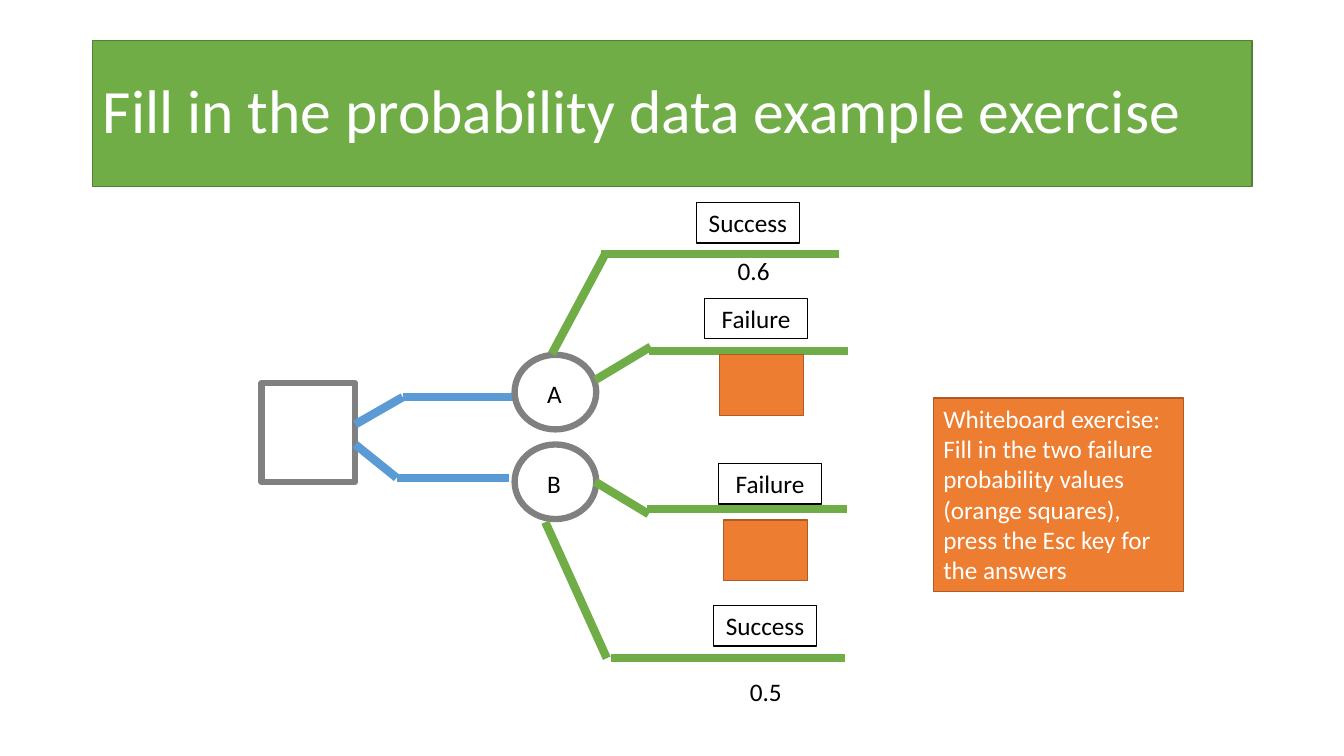
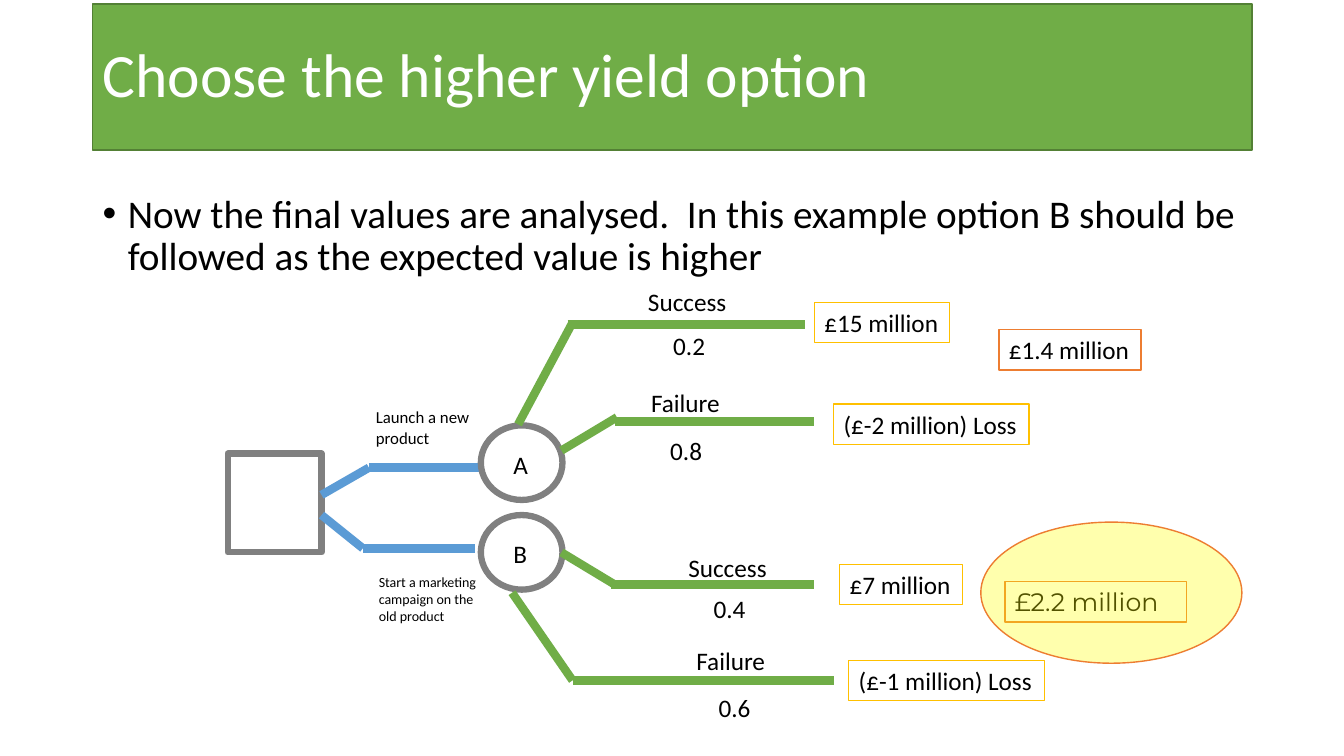
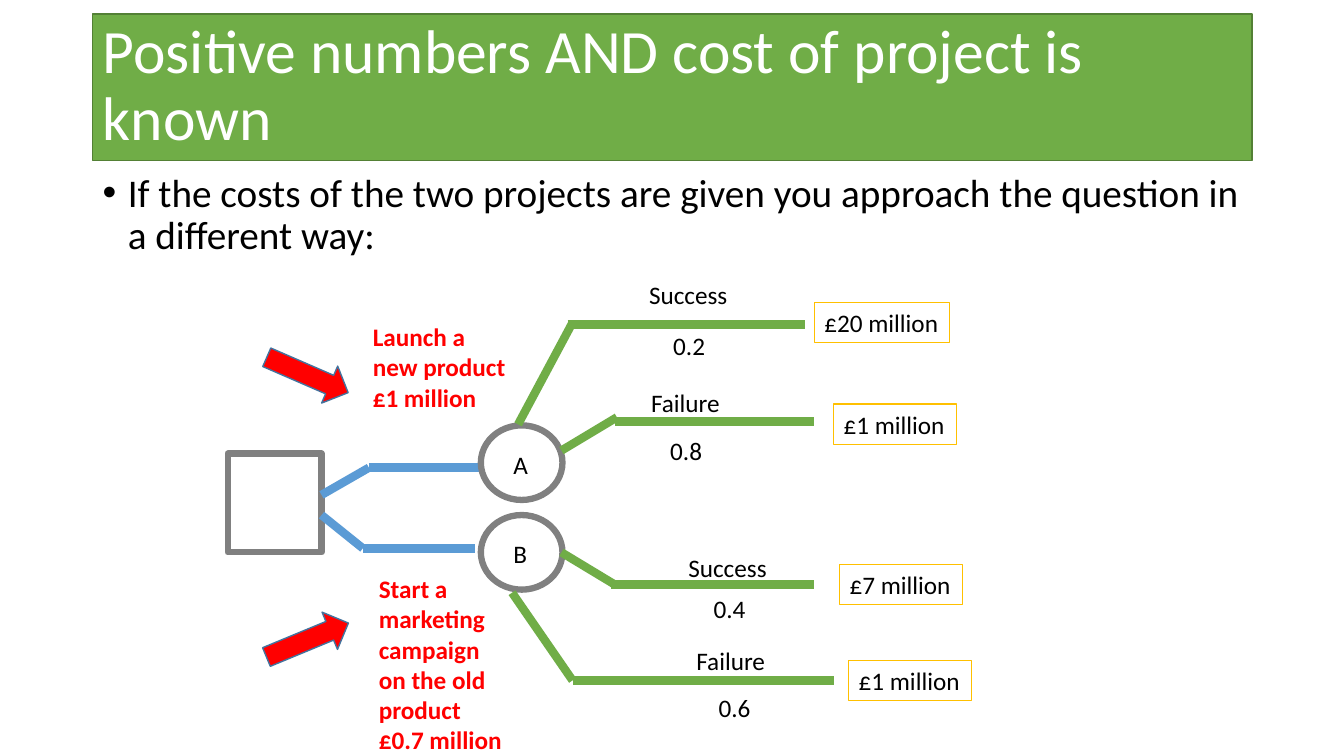
from lxml import etree
from pptx import Presentation
from pptx.dml.color import RGBColor
from pptx.enum.shapes import MSO_CONNECTOR, MSO_SHAPE
from pptx.enum.text import MSO_ANCHOR, MSO_AUTO_SIZE, PP_ALIGN
from pptx.oxml.ns import qn
from pptx.util import Inches, Pt

# Grid: square cells of a tenth of an inch, 133.33 columns by 75 rows
CELL = Inches(0.1)
COLUMNS, ROWS = 133.33, 75
FONT = "Calibri"
COLORS = {
    "black": "000000", "white": "FFFFFF", "grey": "808080", "blue": "5B9BD5",
    "green": "70AD47", "dark green": "538035", "orange": "ED7D31",
    "dark orange": "AF5C24", "gold": "FFC000", "yellow": "FFFF00",
    "red": "FF0000", "dark blue": "43739E",
}
RGB = {name: RGBColor.from_string(value) for name, value in COLORS.items()}

# Widths of the one-line texts, in columns
TEXT_WIDTHS = {
    "A": 3.5, "B": 3.5, "Success": 9.9, "Failure": 8.9,
    "£15 million": 13.4, "£20 million": 13.4, "£7 million": 12.2, "£1 million": 12.2,
    "(£-2 million) Loss": 19.4, "(£-1 million) Loss": 19.4,
    "£1.4 million": 14.1, "£2.2 million": 18,
}
PROBABILITY_WIDTH, TEXT_HEIGHT = 5.2, 4


def add_box(slide, kind, left, top, width, height, text="", fill=None, line=None,
            weight=1, color="black", size=18, bold=False, font=FONT,
            wrap=False, centred=False):
    """Add a preset shape, or a text box when kind is None."""
    place = [int(value * CELL) for value in (left, top, width, height)]
    if kind is None:
        shape = slide.shapes.add_textbox(*place)
    else:
        shape = slide.shapes.add_shape(kind, *place)
        shape.shadow.inherit = False
    if fill:
        shape.fill.solid()
        shape.fill.fore_color.rgb = RGB[fill]
    else:
        shape.fill.background()
    if line:
        shape.line.color.rgb = RGB[line]
        shape.line.width = Pt(weight)
    else:
        shape.line.fill.background()
    if text:
        frame = shape.text_frame
        frame.text = text
        frame.word_wrap = wrap
        frame.auto_size = MSO_AUTO_SIZE.NONE if centred else MSO_AUTO_SIZE.SHAPE_TO_FIT_TEXT
        frame.vertical_anchor = MSO_ANCHOR.MIDDLE if centred else MSO_ANCHOR.TOP
        for paragraph in frame.paragraphs:
            paragraph.alignment = PP_ALIGN.CENTER if centred else PP_ALIGN.LEFT
            paragraph.font.name = font
            paragraph.font.size = Pt(size)
            paragraph.font.bold = bold
            paragraph.font.color.rgb = RGB[color]
    return shape


def add_branch(slide, points, color, shift):
    """Add one thick line of the tree, moved by shift."""
    ends = [int((value + move) * CELL) for value, move in zip(points, shift * 2)]
    branch = slide.shapes.add_connector(MSO_CONNECTOR.STRAIGHT, *ends)
    branch.line.color.rgb = RGB[color]
    branch.line.width = Pt(6)
    etree.SubElement(branch.element.spPr, qn("a:effectLst"))


# Parts of the decision tree that all slides share
OPTION_LINES = [(31.9, 49.1, 36.6, 46.4), (36.6, 46.4, 47.7, 46.4),
                (31.9, 51.1, 36, 54.4), (36, 54.4, 47.1, 54.4)]
OUTCOME_LINES = [(51.4, 42.1, 56.8, 32), (56.3, 32.2, 79.9, 32.2),
                 (55.7, 44.7, 61.2, 41.4), (61, 41.8, 80.8, 41.8),
                 (55.7, 54.8, 61, 58)]
CHANCE_NODES = [("A", 47.7, 42.2), ("B", 47.7, 51.1)]

# Parts that slides 2 and 3 share
LOWER_LINES = [(60.6, 58, 80.8, 58), (50.8, 58.8, 56.8, 67.5), (56.8, 67.5, 82.7, 67.5)]
LABELS = [("Success", 67.3, 54.3), ("Failure", 63.6, 37.9), ("Failure", 68.1, 63.5),
          ("0.2", 65.8, 32.3), ("0.8", 65.5, 42.7), ("0.4", 69.8, 58.4), ("0.6", 70.3, 68.2)]
PAYOFF_PLACES = [(80.8, 30), (82.7, 40.1), (83.3, 56), (84.2, 65.5)]

SLIDES = [
    {"title": "Fill in the probability data example exercise", "title top": 4,
     "shift": (3.35, -7),
     "lower lines": [(60.85, 57.5, 80.65, 57.5), (50.75, 58.8, 56.85, 72.3),
                     (57.25, 72.3, 80.45, 72.3)],
     "labels": [("0.6", 72.2, 24.8), ("0.5", 73.4, 66.6)]},
    {"title": "Choose the higher yield option", "title top": 0.4,
     "shift": (0, 0), "lower lines": LOWER_LINES,
     "bullet": "Now the final values are analysed.  In this example option B should be "
               "followed as the expected value is higher",
     "bullet top": 18.8,
     "labels": LABELS + [("Success", 63.3, 27.9)],
     "payoffs": ["£15 million", "(£-2 million) Loss", "£7 million", "(£-1 million) Loss"],
     "options": [("Launch a new product", 36.3, 39.9, 11.7, 5, 12),
                 ("Start a marketing campaign on the old product", 36.6, 56.4, 12.6, 6.1, 10)],
     "option color": "black"},
    {"title": "Positive numbers AND cost of project is known", "title top": 1.4,
     "shift": (0, 0), "lower lines": LOWER_LINES,
     "bullet": "If the costs of the two projects are given you approach the question in "
               "a different way:",
     "bullet top": 16.7,
     "labels": LABELS + [("Success", 63.4, 27.2)],
     "payoffs": ["£20 million", "£1 million", "£7 million", "£1 million"],
     "options": [("Launch a new product £1 million", 36, 31.4, 15.6, 10.1, 18),
                 ("Start a marketing campaign on the old product\n£0.7 million",
                  36.6, 56.4, 14.6, 19.2, 18)],
     "option color": "red"},
]

presentation = Presentation()
presentation.slide_width = int(COLUMNS * CELL)
presentation.slide_height = ROWS * CELL
title_only = presentation.slide_layouts[5]
slides = []

for content in SLIDES:
    slide = presentation.slides.add_slide(title_only)
    slides.append(slide)
    shift = content["shift"]
    right, down = shift

    # Title band
    title = slide.shapes.title
    title.left, title.top, title.width, title.height = [
        int(value * CELL) for value in (9.2, content["title top"], 115, 14.5)]
    title.fill.solid()
    title.fill.fore_color.rgb = RGB["green"]
    title.line.color.rgb = RGB["dark green"]
    title.line.width = Pt(1)
    frame = title.text_frame
    frame.text = content["title"]
    frame.word_wrap = True
    frame.auto_size = MSO_AUTO_SIZE.NONE
    frame.vertical_anchor = MSO_ANCHOR.MIDDLE
    paragraph = frame.paragraphs[0]
    paragraph.alignment = PP_ALIGN.LEFT
    paragraph.line_spacing = 0.9
    paragraph.font.name = FONT
    paragraph.font.size = Pt(44)
    paragraph.font.color.rgb = RGB["white"]

    # Bulleted statement
    if "bullet" in content:
        statement = add_box(slide, None, 9.2, content["bullet top"], 115, 10,
                            content["bullet"], size=28, wrap=True)
        paragraph = statement.text_frame.paragraphs[0]
        paragraph.line_spacing = 0.9
        paragraph.space_before = Pt(10)
        properties = paragraph._p.get_or_add_pPr()
        properties.set("marL", str(Inches(0.25)))
        properties.set("indent", str(-Inches(0.25)))
        bullet_font = etree.Element(qn("a:buFont"), typeface="Arial")
        bullet = etree.Element(qn("a:buChar"), char="•")
        font_properties = properties.find(qn("a:defRPr"))
        font_properties.addprevious(bullet_font)
        font_properties.addprevious(bullet)

    # Decision node, options and chance nodes
    add_box(slide, MSO_SHAPE.RECTANGLE, 22.6 + right, 45 + down, 9.3, 9.8,
            line="grey", weight=4.5)
    for points in OPTION_LINES:
        add_branch(slide, points, "blue", shift)
    for text, left, top, width, height, size in content.get("options", []):
        add_box(slide, None, left, top, width, height, text, size=size, wrap=True,
                color=content["option color"], bold=content["option color"] == "red")
    for letter, left, top in CHANCE_NODES:
        add_box(slide, MSO_SHAPE.OVAL, left + right, top + down, 8.1, 7.4,
                line="grey", weight=4.5)
        add_box(slide, None, left + right + 2.25, top + down + 1.85,
                TEXT_WIDTHS[letter], TEXT_HEIGHT, letter)

    # Outcomes, probabilities and payoffs
    for points in OUTCOME_LINES + content["lower lines"]:
        add_branch(slide, points, "green", shift)
    for text, left, top in content["labels"]:
        add_box(slide, None, left, top, TEXT_WIDTHS.get(text, PROBABILITY_WIDTH),
                TEXT_HEIGHT, text)
    for text, (left, top) in zip(content.get("payoffs", []), PAYOFF_PLACES):
        add_box(slide, MSO_SHAPE.RECTANGLE, left, top, TEXT_WIDTHS[text], TEXT_HEIGHT,
                text, fill="white", line="gold")

exercise, decision, costs = slides

# Exercise: framed outcomes, squares over the answers, instructions
for text, left, top in [("Success", 70.8, 60.1), ("Failure", 71.3, 46),
                        ("Failure", 69.9, 29.6), ("Success", 69.1, 20.1)]:
    add_box(exercise, MSO_SHAPE.RECTANGLE, left, top, 10.2, TEXT_HEIGHT, text,
            fill="white", line="black", centred=True)
for left, top in [(71.4, 35.2), (71.8, 51.6)]:
    add_box(exercise, MSO_SHAPE.RECTANGLE, left, top, 8.3, 6,
            fill="orange", line="dark orange")
add_box(exercise, MSO_SHAPE.RECTANGLE, 92.6, 39.5, 24.8, 19.2,
        "Whiteboard exercise:\nFill in the two failure probability values "
        "(orange squares), press the Esc key for the answers",
        fill="orange", line="dark orange", color="white", wrap=True)

# Decision: expected values, with the higher one highlighted
for text, left, top, font in [("£1.4 million", 99.1, 32.7, FONT),
                              ("£2.2 million", 99.7, 57.7, "Montserrat")]:
    add_box(decision, MSO_SHAPE.RECTANGLE, left, top, TEXT_WIDTHS[text], TEXT_HEIGHT,
            text, fill="white", line="orange", font=font)
highlight = add_box(decision, MSO_SHAPE.OVAL, 97.3, 51.8, 25.9, 14,
                    fill="yellow", line="orange")
highlight_color = highlight.element.spPr.find(qn("a:solidFill"))[0]
etree.SubElement(highlight_color, qn("a:alpha"), val="32000")

# Costs: arrows pointing at the project costs
for top, rotation in [(35.2, 23.5), (61.5, 337.5)]:
    arrow = add_box(costs, MSO_SHAPE.RIGHT_ARROW, 26.1, top, 8.8, 4,
                    fill="red", line="dark blue")
    arrow.rotation = rotation

presentation.save("out.pptx")
